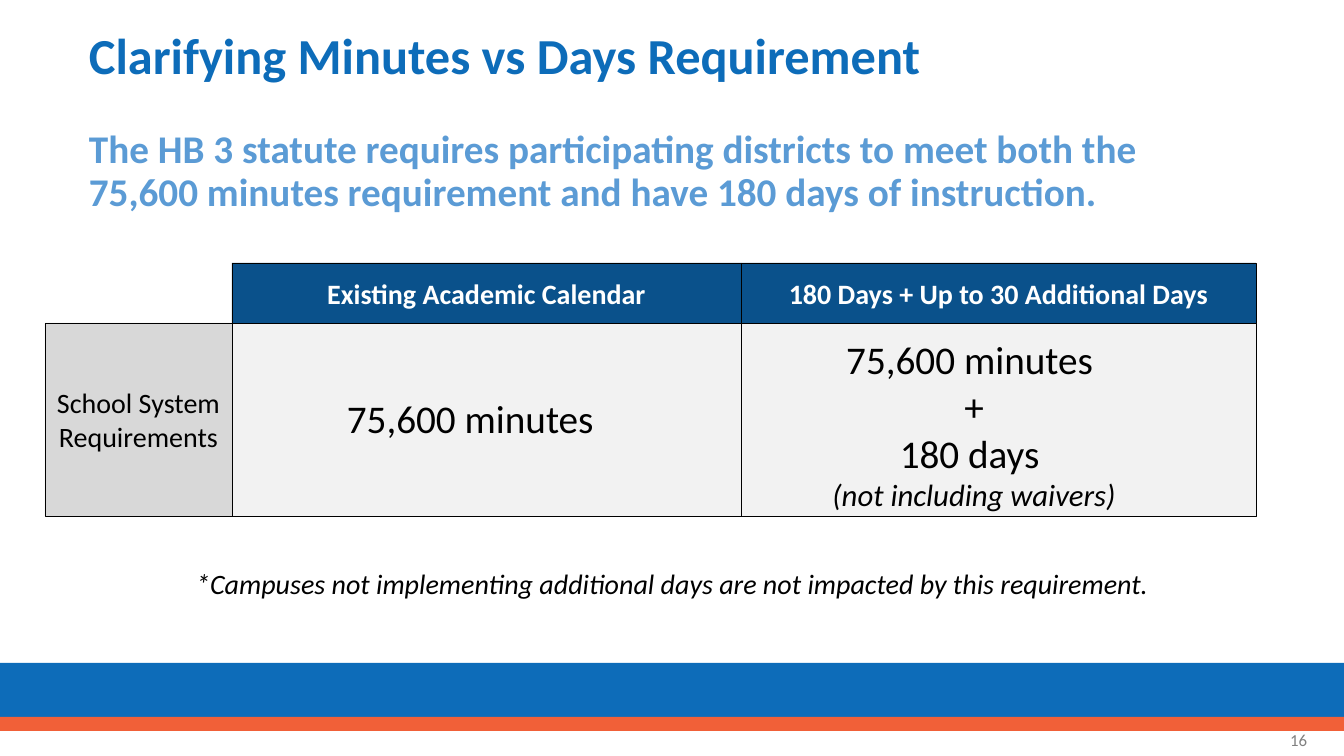
from lxml import etree
from pptx import Presentation
from pptx.dml.color import RGBColor
from pptx.enum.shapes import MSO_CONNECTOR, MSO_SHAPE
from pptx.enum.text import MSO_ANCHOR, PP_ALIGN
from pptx.oxml.ns import qn
from pptx.util import Pt

RECTANGLE = MSO_SHAPE.RECTANGLE
STRAIGHT = MSO_CONNECTOR.STRAIGHT
TOP, MIDDLE = MSO_ANCHOR.TOP, MSO_ANCHOR.MIDDLE
LEFT, CENTER, RIGHT = PP_ALIGN.LEFT, PP_ALIGN.CENTER, PP_ALIGN.RIGHT

BLUE = RGBColor(0x0D, 0x6C, 0xB9)
ORANGE = RGBColor(0xF1, 0x60, 0x38)
LIGHT_BLUE = RGBColor(0x5B, 0x9B, 0xD5)
NAVY = RGBColor(0x0A, 0x51, 0x8B)
PALE_GRAY = RGBColor(0xF2, 0xF2, 0xF2)
LABEL_GRAY = RGBColor(0xD8, 0xD8, 0xD8)
NUMBER_GRAY = RGBColor(0x80, 0x80, 0x80)
BLACK = RGBColor(0, 0, 0)
WHITE = RGBColor(0xFF, 0xFF, 0xFF)

# Content
TITLE = "Clarifying Minutes vs Days Requirement"
STATEMENT = ("The HB 3 statute requires participating districts to meet both the "
             "75,600 minutes requirement and have 180 days of instruction.")
HEADERS = ["Existing Academic Calendar", "180 Days + Up to 30 Additional Days"]
ROW_LABEL = "School System Requirements"
EXISTING_MINUTES = "75,600 minutes"
ADDITIONAL_LINES = ["75,600 minutes ", "+", "180 days \v"]
WAIVER_NOTE = "(not including waivers)"
FOOTNOTE = "*Campuses not implementing additional days are not impacted by this requirement."
SLIDE_NUMBER = "16"

# Grid of the comparison, in px
FONT = "Calibri"
COLUMN_EDGES = [45, 232, 741, 1256]
HEADER_TOP, ROW_TOP, ROW_BOTTOM = 263, 323, 516
HEADER_HEIGHT = ROW_TOP - HEADER_TOP
ROW_HEIGHT = ROW_BOTTOM - ROW_TOP
SLIDE_WIDTH, SLIDE_HEIGHT = 1344, 756


def px(length):
    return round(length * 914400 / 100.8)


presentation = Presentation()
presentation.slide_width = px(SLIDE_WIDTH)
presentation.slide_height = px(SLIDE_HEIGHT)
slide = presentation.slides.add_slide(presentation.slide_layouts[6])


def write(shape, lines, size, color, align=LEFT, anchor=TOP, bold=False, italic=False,
          line_spacing=None):
    frame = shape.text_frame
    frame.word_wrap = True
    frame.vertical_anchor = anchor
    frame.text = "\n".join(lines)
    for paragraph in frame.paragraphs:
        paragraph.alignment = align
        paragraph.line_spacing = line_spacing
        font = paragraph.font
        font.name, font.size, font.bold, font.italic = FONT, Pt(size), bold, italic
        font.color.rgb = color
    return frame


def add_box(left, top, width, height, fill, outlined=True):
    shape = slide.shapes.add_shape(RECTANGLE, px(left), px(top), px(width), px(height))
    shape.shadow.inherit = False
    shape.fill.solid()
    shape.fill.fore_color.rgb = fill
    if outlined:
        shape.line.color.rgb = BLACK
        shape.line.width = Pt(0.25)
    else:
        shape.line.fill.background()
    return shape


def add_text(left, top, width, height, lines, size, color, **style):
    box = slide.shapes.add_textbox(px(left), px(top), px(width), px(height))
    return write(box, lines, size, color, **style)


# Bottom bands
add_box(0, 663, SLIDE_WIDTH, 58, BLUE, outlined=False)
add_box(0, 717, SLIDE_WIDTH, 14, ORANGE, outlined=False)

# Title, statement and slide number
add_text(79, 17, 1226, 83, [TITLE], 36, BLUE, anchor=MIDDLE, bold=True, line_spacing=0.9)
add_text(79, 125, 1171, 506, [STATEMENT], 28, LIGHT_BLUE, bold=True, line_spacing=0.9)
add_text(1015, 720, 302, 40, [SLIDE_NUMBER], 12, NUMBER_GRAY, align=RIGHT, anchor=MIDDLE)

# Comparison panel and headers
add_box(COLUMN_EDGES[1], ROW_TOP, COLUMN_EDGES[3] - COLUMN_EDGES[1], ROW_HEIGHT, PALE_GRAY)
for header, left, right in zip(HEADERS, COLUMN_EDGES[1:], COLUMN_EDGES[2:]):
    header_box = add_box(left, HEADER_TOP, right - left, HEADER_HEIGHT, NAVY)
    write(header_box, [header], 20, WHITE, align=CENTER, anchor=MIDDLE, bold=True)

# Column divider
divider_x = px(COLUMN_EDGES[2])
divider = slide.shapes.add_connector(STRAIGHT, divider_x, px(HEADER_TOP),
                                     divider_x, px(ROW_BOTTOM))
divider.line.color.rgb = BLACK
divider.line.width = Pt(0.5)
etree.SubElement(divider._element.spPr, qn("a:effectLst"))

# Requirements row
add_text(337, 389, 297, 51, [EXISTING_MINUTES], 28, BLACK)
additional = add_text(780, 330, 388, 168, ADDITIONAL_LINES, 28, BLACK, align=CENTER)
note = additional.paragraphs[-1].add_run()
note.text = WAIVER_NOTE
note.font.size = Pt(22)
note.font.italic = True
label_box = add_box(COLUMN_EDGES[0], ROW_TOP, COLUMN_EDGES[1] - COLUMN_EDGES[0],
                    ROW_HEIGHT, LABEL_GRAY)
write(label_box, [ROW_LABEL], 20, BLACK, align=CENTER, anchor=MIDDLE)

# Footnote
add_text(87, 562, 1171, 44, [FOOTNOTE], 20, BLACK, align=CENTER, italic=True)

presentation.save("out.pptx")
